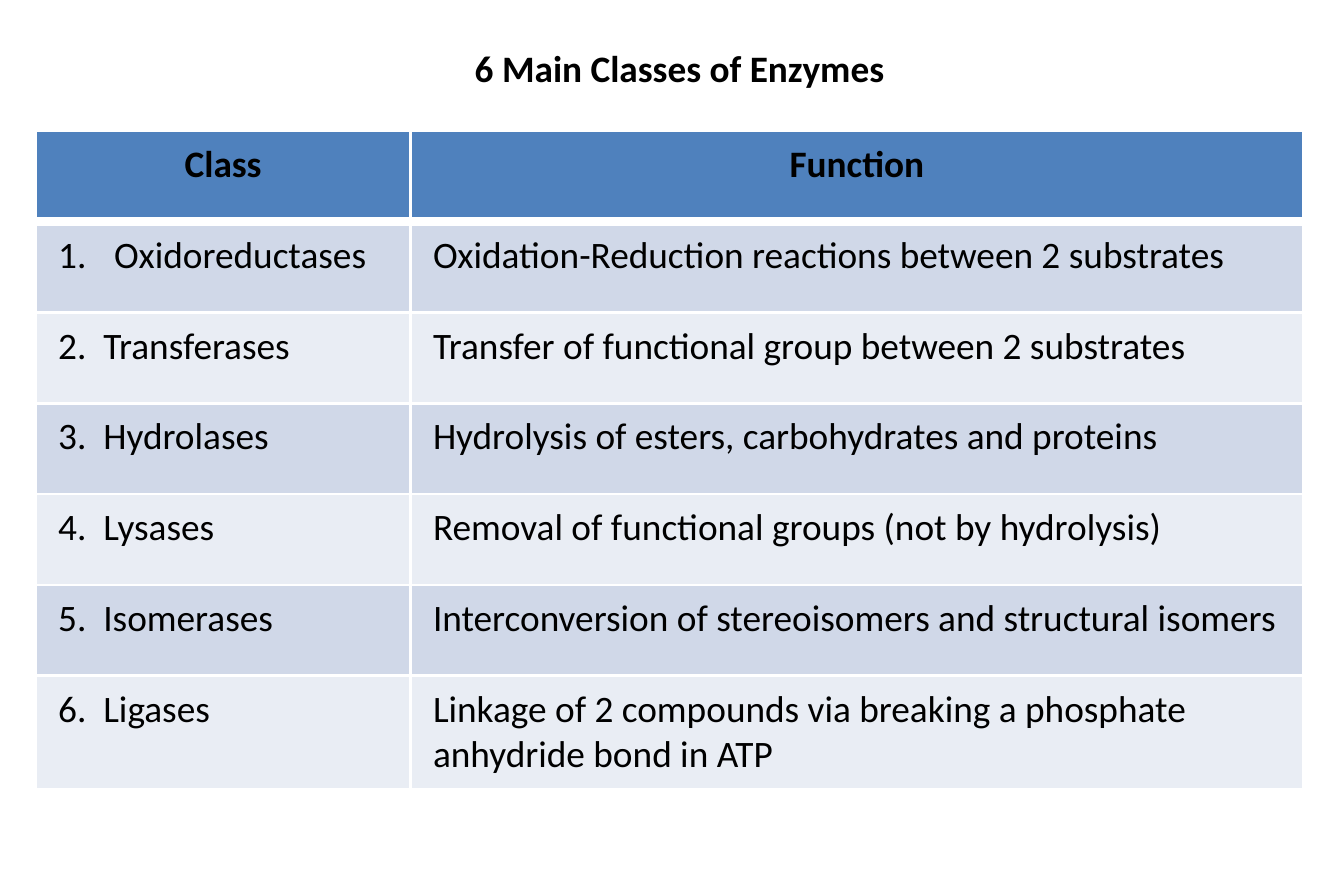
from lxml.etree import SubElement
from pptx import Presentation
from pptx.dml.color import RGBColor
from pptx.enum.text import MSO_ANCHOR, PP_ALIGN
from pptx.oxml.ns import qn
from pptx.util import Pt

FONT = "Calibri"
BLACK = RGBColor(0x00, 0x00, 0x00)
WHITE = RGBColor(0xFF, 0xFF, 0xFF)
HEADER_BLUE = RGBColor(0x4F, 0x81, 0xBD)
BAND_DARK = RGBColor(0xD0, 0xD8, 0xE8)
BAND_LIGHT = RGBColor(0xE9, 0xED, 0xF4)

TITLE = "6 Main Classes of Enzymes"
HEADINGS = ("Class", "Function")
ENZYMES = [
    ("Oxidoreductases", "Oxidation-Reduction reactions between 2 substrates"),
    ("Transferases", "Transfer of functional group between 2 substrates"),
    ("Hydrolases", "Hydrolysis of esters, carbohydrates and proteins"),
    ("Lysases", "Removal of functional groups (not by hydrolysis)"),
    ("Isomerases", "Interconversion of stereoisomers and structural isomers"),
    ("Ligases", "Linkage of 2 compounds via breaking a phosphate anhydride bond in ATP"),
]


def add_text(paragraph, text, bold=False):
    run = paragraph.add_run()
    run.text = text
    run.font.name = FONT
    run.font.size = Pt(12)
    run.font.bold = bold
    run.font.color.rgb = BLACK


def number_paragraph(paragraph, number, indent):
    properties = paragraph._p.get_or_add_pPr()
    properties.set("marL", str(Pt(indent)))
    properties.set("indent", str(-Pt(indent)))
    SubElement(properties, qn("a:buFont"), typeface="+mj-lt")
    SubElement(properties, qn("a:buAutoNum"), type="arabicPeriod", startAt=str(number))


def set_borders(cell, top, bottom):
    """Draw white borders; they must precede the fill in the cell properties."""
    properties = cell._tc.get_or_add_tcPr()
    for side, width in (("L", 1), ("R", 1), ("T", top), ("B", bottom)):
        line = SubElement(properties, qn(f"a:ln{side}"), w=str(Pt(width)))
        fill = SubElement(line, qn("a:solidFill"))
        SubElement(fill, qn("a:srgbClr"), val=str(WHITE))


def fill_cell(cell, color):
    cell.fill.solid()
    cell.fill.fore_color.rgb = color


def add_title(slide, left, top, width, height):
    title = slide.shapes.title
    title.left, title.top, title.width, title.height = map(Pt, (left, top, width, height))
    frame = title.text_frame
    frame.word_wrap = False
    frame.vertical_anchor = MSO_ANCHOR.TOP
    paragraph = frame.paragraphs[0]
    paragraph.alignment = PP_ALIGN.LEFT
    add_text(paragraph, TITLE, bold=True)


def add_enzyme_table(slide, left, top, column_widths, row_height):
    row_count = len(ENZYMES) + 1
    table = slide.shapes.add_table(
        row_count, len(HEADINGS), Pt(left), Pt(top),
        Pt(sum(column_widths)), Pt(row_height * row_count)).table
    for column, width in zip(table.columns, column_widths):
        column.width = Pt(width)
    for row in table.rows:
        row.height = Pt(row_height)

    # Header row
    for column, heading in enumerate(HEADINGS):
        cell = table.cell(0, column)
        set_borders(cell, 1, 3)
        fill_cell(cell, HEADER_BLUE)
        paragraph = cell.text_frame.paragraphs[0]
        paragraph.alignment = PP_ALIGN.CENTER
        add_text(paragraph, heading, bold=True)

    # Numbered enzyme rows in alternating bands
    for number, texts in enumerate(ENZYMES, start=1):
        for column, text in enumerate(texts):
            cell = table.cell(number, column)
            set_borders(cell, 3 if number == 1 else 1, 1)
            fill_cell(cell, BAND_DARK if number % 2 else BAND_LIGHT)
            paragraph = cell.text_frame.paragraphs[0]
            if column == 0:
                number_paragraph(paragraph, number, 18 if number == 1 else 14.5)
            add_text(paragraph, text)


def main():
    presentation = Presentation()
    presentation.slide_width, presentation.slide_height = Pt(432), Pt(288)
    slide = presentation.slides.add_slide(presentation.slide_layouts[5])
    add_title(slide, 145.4, 10.8, 147.6, 21.8)
    add_enzyme_table(slide, 11.5, 42, (120.5, 287), 29.2)
    presentation.save("out.pptx")


if __name__ == "__main__":
    main()
